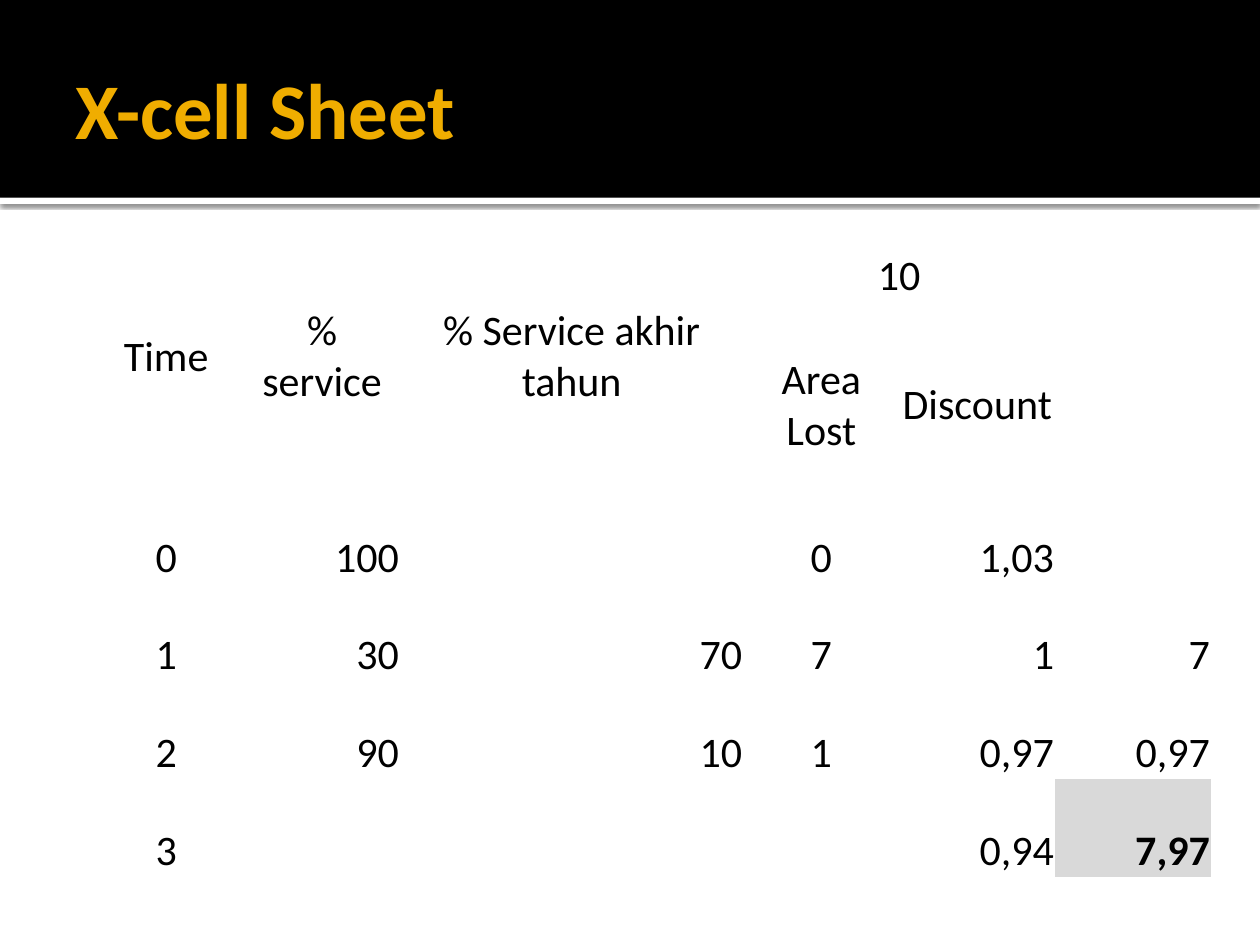
from lxml.etree import SubElement
from pptx import Presentation
from pptx.dml.color import RGBColor
from pptx.enum.shapes import MSO_SHAPE
from pptx.enum.text import MSO_ANCHOR, PP_ALIGN
from pptx.oxml.ns import qn
from pptx.util import Pt

COLORS = {
    "black": "000000",
    "white": "FFFFFF",
    "title": "F0AD00",
    "total": "D9D9D9",
}
NO_STYLE = "{2D5ABB26-0587-4C30-8999-92F81FD0307C}"
SLIDE_WIDTH, SLIDE_HEIGHT = 720, 540
BAND_HEIGHT = 113
COLUMN_WIDTHS = [89.1, 89.1, 196.2, 89.1, 89.1, 89.1]
ROW_HEIGHTS = [55.9, 92] + [55.9] * 4
HEADER_ROWS = 2
CENTERED_COLUMNS = {0, 3}
MERGES = [((0, column), (1, column)) for column in range(3)] + [((0, 3), (0, 4))]
ROWS = [
    ["Time", "% service", "% Service akhir tahun", "10", "", ""],
    ["", "", "", "Area Lost", "Discount", ""],
    ["0", "100", "", "0", "1,03", ""],
    ["1", "30", "70", "7", "1", "7"],
    ["2", "90", "10", "1", "0,97", "0,97"],
    ["3", "", "", "", "0,94", "7,97"],
]


def color(name):
    return RGBColor.from_string(COLORS[name])


def apply_format(target, values):
    for name, value in values.items():
        setattr(target, name, value)


class SlideBuilder:
    font_name = "Calibri"
    cell_margins = {
        "margin_left": Pt(0.7),
        "margin_right": Pt(0.7),
        "margin_top": Pt(0.7),
        "margin_bottom": 0,
    }

    def __init__(self, slide):
        self.slide = slide

    def add_text(self, paragraph, text, size, color_name="black", bold=False):
        run = paragraph.add_run()
        run.text = text
        apply_format(run.font, {"name": self.font_name, "size": Pt(size), "bold": bold})
        run.font.color.rgb = color(color_name)

    def band(self, top, height, color_name):
        shape = self.slide.shapes.add_shape(
            MSO_SHAPE.RECTANGLE, 0, Pt(top), Pt(SLIDE_WIDTH), Pt(height)
        )
        shape.shadow.inherit = False
        shape.fill.solid()
        shape.fill.fore_color.rgb = color(color_name)
        shape.line.fill.background()
        return shape

    def add_shadow(self, shape, blur, distance, opacity):
        effects = shape._element.spPr.find(qn("a:effectLst"))
        shadow = SubElement(
            effects,
            qn("a:outerShdw"),
            blurRad=str(Pt(blur)),
            dist=str(Pt(distance)),
            dir="5400000",
            rotWithShape="0",
        )
        shade = SubElement(shadow, qn("a:srgbClr"), val=COLORS["black"])
        SubElement(shade, qn("a:alpha"), val=str(opacity * 1000))

    def title(self, text, left, top, width, height):
        frame = self.slide.shapes.add_textbox(
            Pt(left), Pt(top), Pt(width), Pt(height)
        ).text_frame
        apply_format(frame, {
            "word_wrap": True,
            "vertical_anchor": MSO_ANCHOR.MIDDLE,
            "margin_left": Pt(7.2),
            "margin_right": Pt(3.6),
            "margin_top": Pt(3.6),
            "margin_bottom": Pt(3.6),
        })
        self.add_text(frame.paragraphs[0], text, 45, "title", True)

    def table(self, left, top):
        frame = self.slide.shapes.add_table(
            len(ROWS), len(COLUMN_WIDTHS), Pt(left), Pt(top),
            Pt(sum(COLUMN_WIDTHS)), Pt(sum(ROW_HEIGHTS)),
        )
        table = frame.table
        apply_format(table, {"first_row": False, "horz_banding": False})
        table._tbl.tblPr.find(qn("a:tableStyleId")).text = NO_STYLE
        for column, width in zip(table.columns, COLUMN_WIDTHS):
            column.width = Pt(width)
        for row, height in zip(table.rows, ROW_HEIGHTS):
            row.height = Pt(height)
        for start, end in MERGES:
            table.cell(*start).merge(table.cell(*end))
        for row_index, texts in enumerate(ROWS):
            for column_index, text in enumerate(texts):
                self.cell(table.cell(row_index, column_index), text, row_index, column_index)

    def cell(self, cell, text, row_index, column_index):
        is_header = row_index < HEADER_ROWS
        is_total = (row_index, column_index) == (len(ROWS) - 1, len(COLUMN_WIDTHS) - 1)
        is_centered = is_header or column_index in CENTERED_COLUMNS
        apply_format(cell, self.cell_margins)
        cell.vertical_anchor = MSO_ANCHOR.MIDDLE if is_header else MSO_ANCHOR.BOTTOM
        if is_total:
            cell.fill.solid()
            cell.fill.fore_color.rgb = color("total")
        else:
            cell.fill.background()
        if text:
            paragraph = cell.text_frame.paragraphs[0]
            paragraph.alignment = PP_ALIGN.CENTER if is_centered else PP_ALIGN.RIGHT
            self.add_text(paragraph, text, 24, bold=is_total)


def main():
    presentation = Presentation()
    apply_format(presentation, {
        "slide_width": Pt(SLIDE_WIDTH),
        "slide_height": Pt(SLIDE_HEIGHT),
    })
    builder = SlideBuilder(presentation.slides.add_slide(presentation.slide_layouts[6]))
    strip = builder.band(BAND_HEIGHT, 3.6, "white")
    builder.add_shadow(strip, 2.5, 0.8, 60)
    builder.band(0, BAND_HEIGHT, "black")
    builder.title("X-cell Sheet", 36, 12.2, 648, 98.6)
    builder.table(50.4, 129.6)
    presentation.save("out.pptx")


if __name__ == "__main__":
    main()
